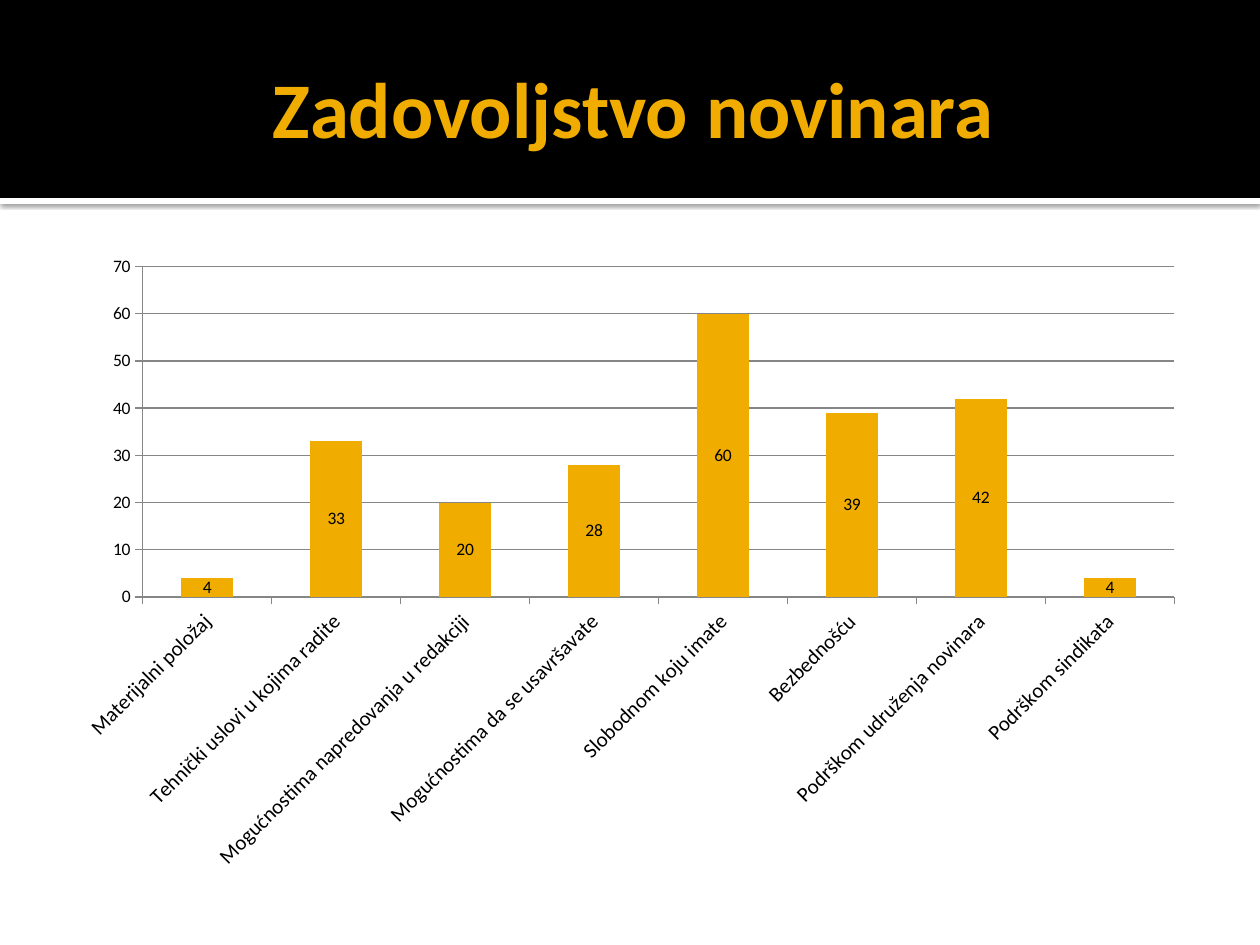
from dataclasses import dataclass

from lxml import etree
from pptx import Presentation
from pptx.chart.data import CategoryChartData
from pptx.dml.color import RGBColor
from pptx.enum.chart import XL_CHART_TYPE, XL_LABEL_POSITION, XL_TICK_MARK
from pptx.enum.shapes import MSO_SHAPE
from pptx.enum.text import MSO_ANCHOR, PP_ALIGN
from pptx.oxml import parse_xml
from pptx.oxml.ns import nsdecls
from pptx.util import Emu, Pt

STACKED = XL_CHART_TYPE.COLUMN_STACKED
CENTER = XL_LABEL_POSITION.CENTER
OUTSIDE = XL_TICK_MARK.OUTSIDE
RECT = MSO_SHAPE.RECTANGLE
MIDDLE = MSO_ANCHOR.MIDDLE
MID = PP_ALIGN.CENTER

SCALE = 914400 / 126  # EMU in one px
FONT = "Calibri"
GOLD, BLACK, WHITE, GRAY = "F0AD00", "000000", "FFFFFF", "868686"

DATA = {
    "Materijalni položaj": 4,
    "Tehnički uslovi u kojima radite": 33,
    "Mogućnostima napredovanja u redakciji": 20,
    "Mogućnostima da se usavršavate": 28,
    "Slobodnom koju imate": 60,
    "Bezbednošću": 39,
    "Podrškom udruženja novinara": 42,
    "Podrškom sindikata": 4,
}


@dataclass
class Band:
    top: int
    height: int
    color: str
    shadow: bool = False


BANDS = [Band(198, 6, WHITE, True), Band(0, 198, BLACK)]


def px(n: int) -> Emu:
    return Emu(round(n * SCALE))


def rgb(color: str) -> RGBColor:
    return RGBColor.from_string(color)


def style(font, size: int, color: str, bold: bool = False) -> None:
    font.name, font.size, font.bold = FONT, Pt(size), bold
    font.color.rgb = rgb(color)


def draw_band(slide, band: Band) -> None:
    shape = slide.shapes.add_shape(RECT, 0, px(band.top), px(1260), px(band.height))
    shape.shadow.inherit = False
    shape.fill.solid()
    shape.fill.fore_color.rgb = rgb(band.color)
    shape.line.fill.background()
    if band.shadow:
        effects = shape.element.spPr.find("{*}effectLst")
        effects.append(parse_xml(
            f'<a:outerShdw {nsdecls("a")} blurRad="31750" dist="10160" '
            'dir="5400000" algn="tl" rotWithShape="0"><a:srgbClr val="000000">'
            '<a:alpha val="60000"/></a:srgbClr></a:outerShdw>'))


def draw_title(slide, text: str) -> None:
    title = slide.shapes.title
    title.left, title.top, title.width, title.height = px(63), px(21), px(1134), px(173)
    frame = title.text_frame
    frame.text = text
    frame.word_wrap = True
    frame.vertical_anchor = MIDDLE
    frame.margin_left = Pt(7.2)
    frame.margin_right = frame.margin_top = frame.margin_bottom = Pt(3.6)
    para = frame.paragraphs[0]
    para.alignment = MID
    style(para.runs[0].font, 45, GOLD, True)
    # Bring the title in front of the bands
    title.element.getparent().append(title.element)


def style_axis(axis, size: int) -> None:
    axis.major_tick_mark = OUTSIDE
    axis.format.line.color.rgb = rgb(GRAY)
    axis.format.line.width = Pt(0.75)
    style(axis.tick_labels.font, size, BLACK)


def draw_chart(slide) -> None:
    data = CategoryChartData()
    data.categories = list(DATA)
    data.add_series("Series 1", list(DATA.values()))
    chart = slide.shapes.add_chart(
        STACKED, px(63), px(244), px(1134), px(638), data).chart
    chart.has_legend = chart.has_title = False
    style(chart.font, 10, BLACK)

    # Axes and grid
    style_axis(chart.category_axis, 12)
    style_axis(chart.value_axis, 10)
    chart.value_axis.has_major_gridlines = True
    grid = chart.value_axis.major_gridlines.format.line
    grid.color.rgb = rgb(GRAY)
    grid.width = Pt(0.75)

    # Columns and their values
    plot = chart.plots[0]
    plot.gap_width, plot.overlap = 150, 100
    plot.vary_by_categories = False
    series = plot.series[0]
    series.format.fill.solid()
    series.format.fill.fore_color.rgb = rgb(GOLD)
    labels = series.data_labels
    labels.show_value = True
    labels.position = CENTER
    style(labels.font, 10, BLACK)


def main() -> None:
    deck = Presentation()
    deck.slide_width, deck.slide_height = px(1260), px(945)
    slide = deck.slides.add_slide(deck.slide_layouts[5])
    for band in BANDS:
        draw_band(slide, band)
    draw_title(slide, "Zadovoljstvo novinara")
    draw_chart(slide)
    deck.save("out.pptx")


if __name__ == "__main__":
    main()
